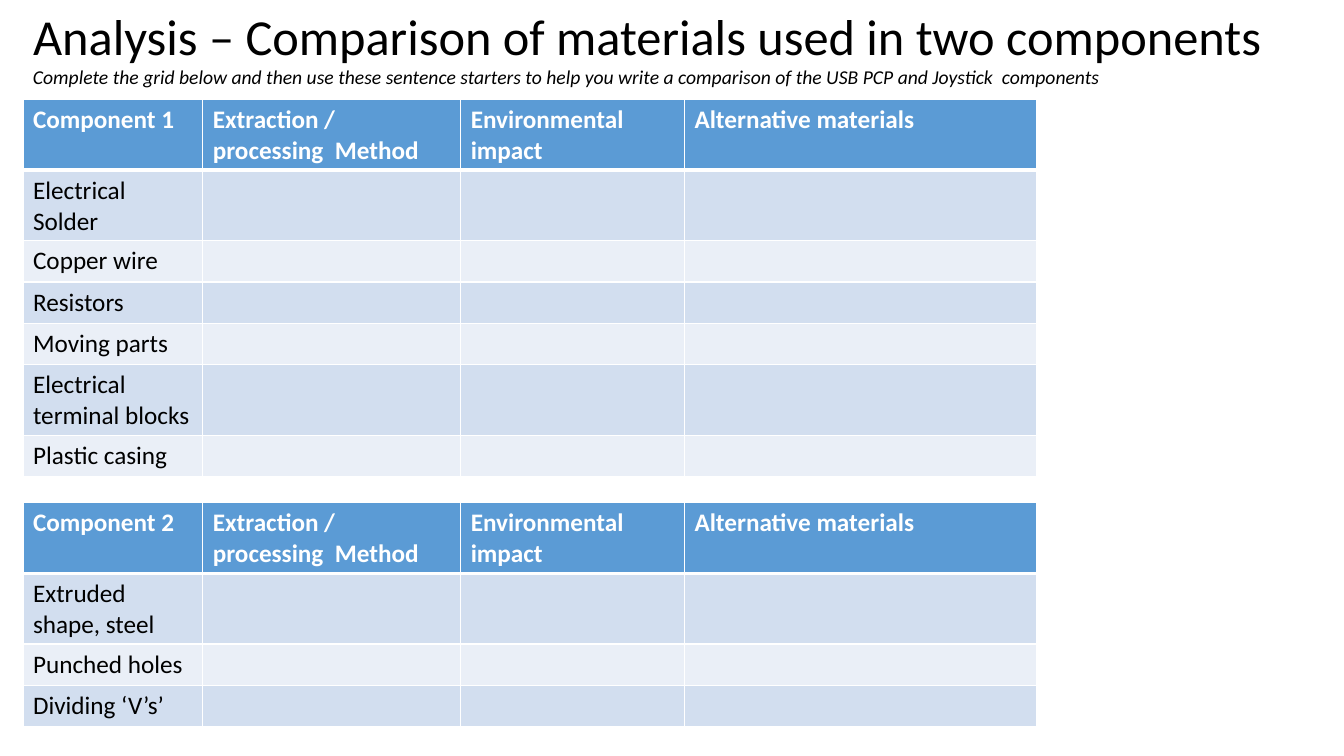
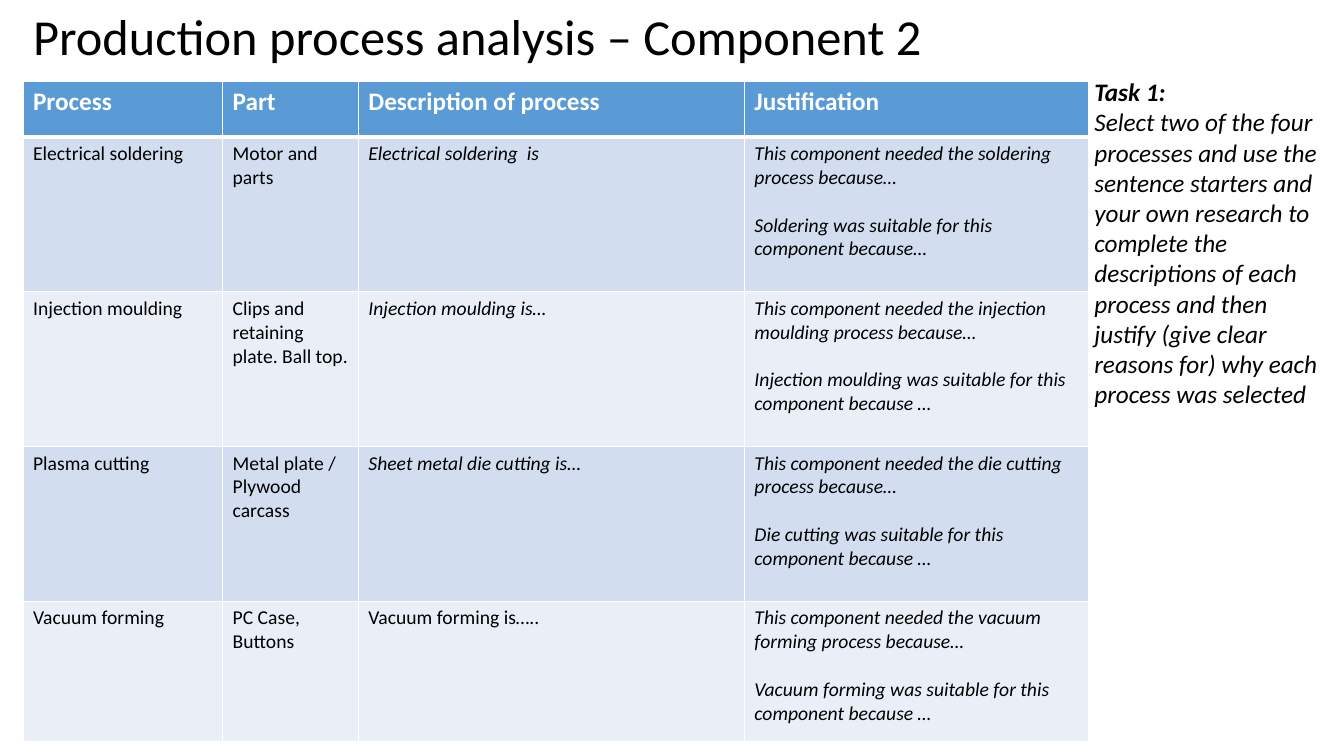
from dataclasses import dataclass

import lxml.etree
import pptx
import pptx.dml.color
import pptx.enum.text
import pptx.oxml.ns
import pptx.slide
import pptx.table
import pptx.text.text
import pptx.util
from pptx.util import Cm

FONT = "Calibri"
INK = {
    "text": "000000",
    "white": "FFFFFF",
    "head": "5B9BD5",
    "dark": "D2DEEF",
    "light": "EAEFF7",
}
LEFT = 0.58
LOW, HIGH = 1.04, 1.77


@dataclass(frozen=True)
class Run:
    text: str
    size: int = 14
    bold: bool = False
    slant: bool = False
    ink: str = "text"


@dataclass(frozen=True)
class Box:
    left: float
    top: float
    width: float
    height: float


@dataclass(frozen=True)
class Grid:
    left: float
    top: float
    cols: list[float]
    rows: list[float]
    heads: list[str]
    body: list[list[list[Run]]]


def color(name: str) -> pptx.dml.color.RGBColor:
    return pptx.dml.color.RGBColor.from_string(INK[name])


def write(frame: pptx.text.text.TextFrame, runs: list[Run], gap: float = 0) -> None:
    for index, run in enumerate(runs):
        para = frame.add_paragraph() if index else frame.paragraphs[0]
        para.alignment = pptx.enum.text.PP_ALIGN.LEFT
        para.space_before = pptx.util.Pt(gap if index else 0)
        piece = para.add_run()
        piece.text = run.text
        font = piece.font
        font.name = FONT
        font.size = pptx.util.Pt(run.size)
        font.bold = run.bold
        font.italic = run.slant
        font.color.rgb = color(run.ink)


def setup(frame: pptx.text.text.TextFrame) -> None:
    frame.word_wrap = True
    frame.auto_size = pptx.enum.text.MSO_AUTO_SIZE.SHAPE_TO_FIT_TEXT
    frame.vertical_anchor = pptx.enum.text.MSO_ANCHOR.TOP


def start(deck: pptx.presentation.Presentation, text: str, width: float) -> pptx.slide.Slide:
    slide = deck.slides.add_slide(deck.slide_layouts[5])
    title = slide.shapes.title
    title.left, title.top = Cm(LEFT), Cm(0)
    title.width, title.height = Cm(width), Cm(1.8)
    setup(title.text_frame)
    write(title.text_frame, [Run(text, 36)])
    return slide


def note(slide: pptx.slide.Slide, box: Box, runs: list[Run]) -> None:
    shape = slide.shapes.add_textbox(
        Cm(box.left), Cm(box.top), Cm(box.width), Cm(box.height)
    )
    setup(shape.text_frame)
    write(shape.text_frame, runs)


def edge(cell: pptx.table._Cell, top: int, base: int) -> None:
    props = cell._tc.get_or_add_tcPr()
    qn = pptx.oxml.ns.qn
    for side, width in (("L", 1), ("R", 1), ("T", top), ("B", base)):
        line = lxml.etree.SubElement(
            props, qn(f"a:ln{side}"), w=str(pptx.util.Pt(width))
        )
        fill = lxml.etree.SubElement(line, qn("a:solidFill"))
        lxml.etree.SubElement(fill, qn("a:srgbClr"), val=INK["white"])


def draw(slide: pptx.slide.Slide, grid: Grid) -> None:
    table = slide.shapes.add_table(
        len(grid.rows), len(grid.cols), Cm(grid.left), Cm(grid.top),
        Cm(sum(grid.cols)), Cm(sum(grid.rows)),
    ).table
    table.horz_banding = False
    for col, width in zip(table.columns, grid.cols):
        col.width = Cm(width)
    heads = [[Run(text, 18, bold=True, ink="white")] for text in grid.heads]
    for row, (height, texts) in enumerate(zip(grid.rows, [heads, *grid.body])):
        table.rows[row].height = Cm(height)
        shade = "head" if row == 0 else "dark" if row % 2 else "light"
        for col in range(len(grid.cols)):
            cell = table.cell(row, col)
            edge(cell, 3 if row == 1 else 1, 3 if row == 0 else 1)
            cell.fill.solid()
            cell.fill.fore_color.rgb = color(shade)
            if col < len(texts):
                write(cell.text_frame, texts[col], gap=17)


def compare(deck: pptx.presentation.Presentation) -> None:
    slide = start(deck, "Analysis – Comparison of materials used in two components", 32.28)
    note(slide, Box(LEFT, 1.5, 32.28, 0.86), [Run(
        "Complete the grid below and then use these sentence starters to help you "
        "write a comparison of the USB PCP and Joystick  components", slant=True,
    )])
    parts = [
        (2.51, "Component 1", [
            ("Electrical Solder", HIGH), ("Copper wire", LOW), ("Resistors", LOW),
            ("Moving parts", LOW), ("Electrical terminal blocks", HIGH),
            ("Plastic casing", LOW),
        ]),
        (12.67, "Component 2", [
            ("Extruded shape, steel", HIGH), ("Punched holes", LOW),
            ("Dividing ‘V’s’", LOW),
        ]),
    ]
    for top, name, items in parts:
        draw(slide, Grid(
            LEFT, top, [4.53, 6.5, 5.64, 8.88],
            [HIGH, *(height for _, height in items)],
            [name, "Extraction / processing  Method", "Environmental impact",
             "Alternative materials"],
            [[[Run(text, 18)]] for text, _ in items],
        ))


def process(deck: pptx.presentation.Presentation) -> None:
    slide = start(deck, "Production process analysis – Component 2", 29.26)
    items = [
        ("Electrical soldering", "Motor and parts",
         Run("Electrical soldering  is", slant=True),
         "This component needed the soldering process because…",
         "Soldering was suitable for this component because…"),
        ("Injection moulding", "Clips and retaining plate. Ball top.",
         Run("Injection moulding is…", slant=True),
         "This component needed the injection moulding process because…",
         "Injection moulding was suitable for this component because …"),
        ("Plasma cutting", "Metal plate / Plywood carcass",
         Run("Sheet metal die cutting is…", slant=True),
         "This component needed the die cutting process because…",
         "Die cutting was suitable for this component because …"),
        ("Vacuum forming", "PC Case, Buttons",
         Run("Vacuum forming is….."),
         "This component needed the vacuum forming process because…",
         "Vacuum forming was suitable for this component because …"),
    ]
    draw(slide, Grid(
        LEFT, 2.04, [5.03, 3.42, 9.73, 8.67], [1.41, 3.9, 3.9, 3.9, 3.54],
        ["Process", "Part", "Description of process", "Justification"],
        [[[Run(name)], [Run(part)], [about], [Run(text, slant=True) for text in why]]
         for name, part, about, *why in items],
    ))
    note(slide, Box(27.33, 1.8, 6.53, 8.71), [
        Run("Task 1:", 18, bold=True, slant=True),
        Run("Select two of the four processes and use the sentence starters and your "
            "own research to complete the descriptions of each process and then "
            "justify (give clear reasons for) why each process was selected",
            18, slant=True),
    ])


def main() -> None:
    deck = pptx.Presentation()
    deck.slide_width, deck.slide_height = Cm(33.87), Cm(19.05)
    compare(deck)
    process(deck)
    deck.save("out.pptx")


if __name__ == "__main__":
    main()
